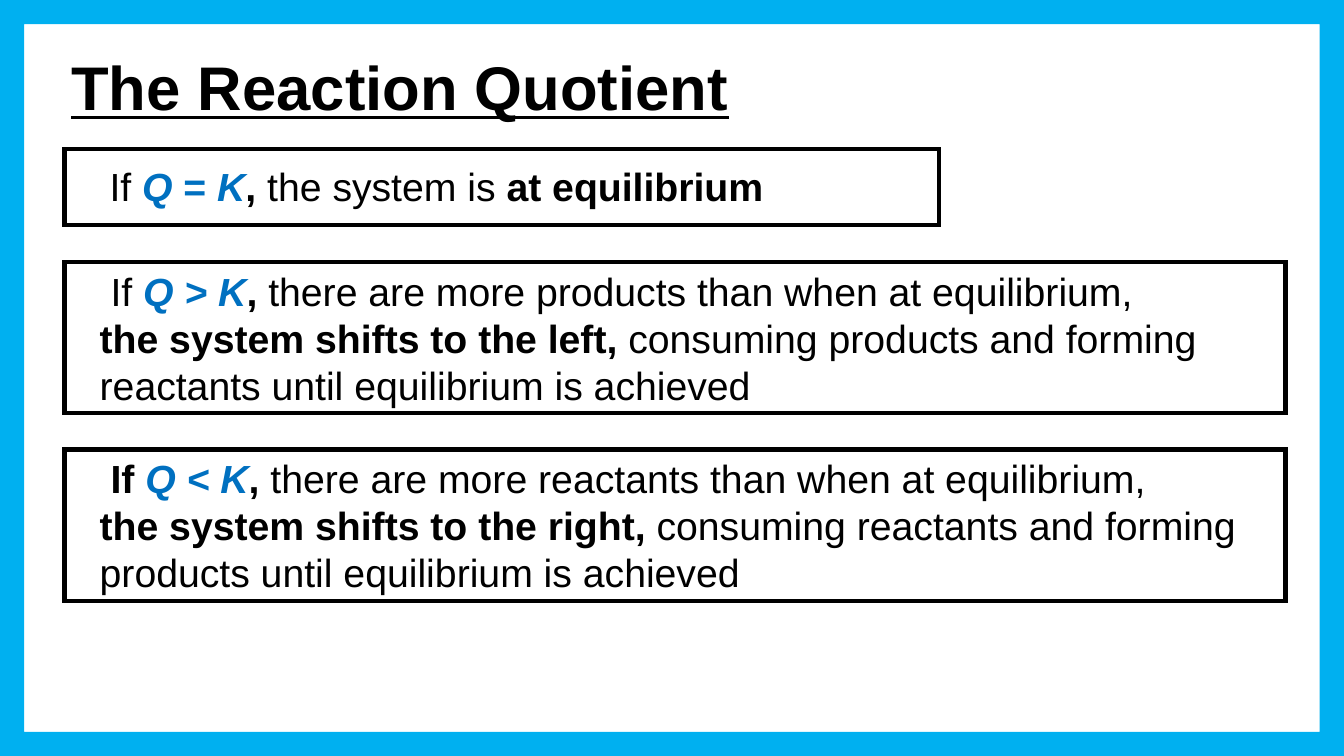
from lxml.etree import SubElement
from pptx import Presentation
from pptx.dml.color import RGBColor
from pptx.enum.shapes import MSO_SHAPE
from pptx.enum.text import MSO_ANCHOR
from pptx.oxml.ns import qn
from pptx.util import Inches, Pt

BLACK = "000000"
BLUE = "0070C0"
SKY = "00B0F0"
WHITE = "FFFFFF"


def color(value):
    return RGBColor.from_string(value)


def add_span(para, text, size=28, ink=BLACK, bold=False, italic=False, underline=False):
    for index, line in enumerate(text.split("\n")):
        if index:
            para.add_line_break()
        if line:
            span = para.add_run()
            span.text = line
            font = span.font
            font.name = "Arial"
            font.size = Pt(size)
            font.bold = bold
            font.italic = italic
            font.underline = underline
            font.color.rgb = color(ink)


def add_text(page, left, top, width, height, anchor=MSO_ANCHOR.TOP):
    box = page.shapes.add_textbox(Inches(left), Inches(top), Inches(width), Inches(height))
    frame = box.text_frame
    frame.word_wrap = True
    frame.vertical_anchor = anchor
    return frame.paragraphs[0]


def add_border(page):
    border = page.shapes.add_shape(MSO_SHAPE.FRAME, 0, 0, Inches(13.33), Inches(7.5))
    border.adjustments[0] = 0.032
    border.shadow.inherit = False
    border.fill.solid()
    border.fill.fore_color.rgb = color(SKY)
    border.line.fill.background()


def add_outline(page, top, width, height):
    outline = page.shapes.add_shape(
        MSO_SHAPE.RECTANGLE, Inches(0.64), Inches(top), Inches(width), Inches(height)
    )
    outline.shadow.inherit = False
    outline.fill.background()
    outline.line.color.rgb = color(BLACK)
    outline.line.width = Pt(3)
    stroke = outline.line._get_or_add_ln()
    SubElement(stroke, qn("a:miter"), lim="800000")


def add_equilibrium(page):
    para = add_text(page, 0.88, 1.56, 8.68, 0.57)
    add_span(para, " If ")
    add_span(para, "Q", ink=BLUE, bold=True, italic=True)
    add_span(para, " = ", ink=BLUE, bold=True)
    add_span(para, "K", ink=BLUE, bold=True, italic=True)
    add_span(para, ", ", bold=True)
    add_span(para, "the system is ")
    add_span(para, "at equilibrium", bold=True)
    add_outline(page, 1.48, 8.67, 0.75)


def add_shift(page, top, width, sign, excess, direction, formed, bold_if):
    para = add_text(page, 0.89, top, width, 1.51)
    add_span(para, " If ", bold=bold_if)
    add_span(para, f"Q {sign} K", ink=BLUE, bold=True, italic=True)
    add_span(para, ", ", bold=True)
    add_span(para, f"there are more {excess} than when at equilibrium, \n")
    add_span(para, f"the system shifts to the {direction}, ", bold=True)
    add_span(para, f"consuming {excess} and forming {formed} until equilibrium is achieved")
    add_outline(page, top, 12.11, 1.5)


def main():
    deck = Presentation()
    deck.slide_width = Inches(13.33)
    deck.slide_height = Inches(7.5)
    page = deck.slides.add_slide(deck.slide_layouts[6])
    page.background.fill.solid()
    page.background.fill.fore_color.rgb = color(WHITE)

    title = add_text(page, 0.61, 0.23, 8.5, 1.25, anchor=MSO_ANCHOR.MIDDLE)
    add_span(title, "The Reaction Quotient", size=44, bold=True, underline=True)
    add_border(page)
    add_equilibrium(page)
    add_shift(page, 2.6, 11.61, ">", "products", "left", "reactants", bold_if=False)
    add_shift(page, 4.46, 12.11, "<", "reactants", "right", "products", bold_if=True)
    deck.save("out.pptx")


if __name__ == "__main__":
    main()
